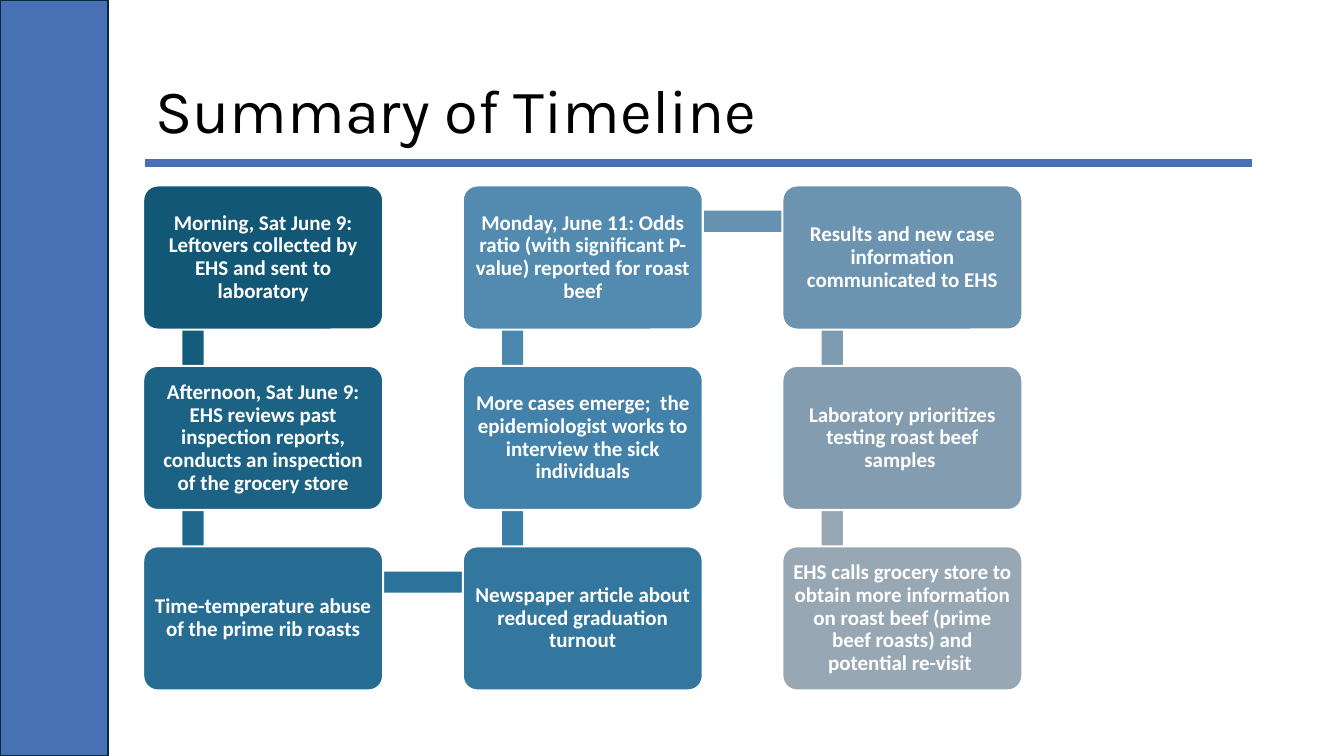
"""Build the "Summary of Timeline" slide: nine steps on a winding path."""
from dataclasses import dataclass

from lxml import etree
from pptx import Presentation
from pptx.dml.color import RGBColor
from pptx.enum.shapes import MSO_CONNECTOR, MSO_SHAPE
from pptx.enum.text import MSO_ANCHOR, PP_ALIGN
from pptx.oxml.ns import qn
from pptx.util import Pt

RECTANGLE = MSO_SHAPE.RECTANGLE
ROUNDED = MSO_SHAPE.ROUNDED_RECTANGLE
STRAIGHT = MSO_CONNECTOR.STRAIGHT
MIDDLE = MSO_ANCHOR.MIDDLE
LEFT, CENTER = PP_ALIGN.LEFT, PP_ALIGN.CENTER

TITLE = "Summary of Timeline"
STEPS = [
    ("Morning, Sat June 9: Leftovers collected by EHS and sent to laboratory", "135776"),
    ("Afternoon, Sat June 9: EHS reviews past inspection reports, "
     "conducts an inspection of the grocery store", "1C6285"),
    ("Time-temperature abuse of the prime rib roasts", "276D93"),
    ("Newspaper article about reduced graduation turnout", "34779E"),
    ("More cases emerge;  the epidemiologist works to interview the sick individuals", "4281A9"),
    ("Monday, June 11: Odds ratio (with significant P-value) reported for roast beef", "538AAF"),
    ("Results and new case information communicated to EHS", "6C93AF"),
    ("Laboratory prioritizes testing roast beef samples ", "839CB0"),
    ("EHS calls grocery store to obtain more information on roast beef "
     "(prime beef roasts) and potential re-visit ", "98A7B4"),
]
LINK_COLORS = ["145C7C", "1F688C", "2B739A", "3A7DA6", "4B88B0", "6691B0", "7F9BB1", "97A7B4"]


@dataclass(frozen=True)
class Theme:
    """Colours, fonts and type sizes."""
    accent: str = "4871B5"
    edge: str = "092A39"
    ink: str = "000000"
    white: str = "FFFFFF"
    title_font: str = "Karla"
    body_font: str = "Calibri"
    title_size: int = 44
    body_size: int = 15
    outline: float = 1.5
    rule: int = 6


THEME = Theme()
EMU_PER_PX = 9144
SLIDE_WIDTH, SLIDE_HEIGHT = 1333, 750
SIDEBAR_WIDTH = 107
TITLE_BOX = (144, 74, 1098, 77)
RULE_Y = 162
ROWS = 3
GRID_LEFT, GRID_TOP = 142, 184
STEP_X, STEP_Y = 317, 179
BOX_WIDTH, BOX_HEIGHT = 238, 143
BOX_INSET = 6
LINK_THICKNESS = 21
VERTICAL_LINK_OFFSET = (39, 36)
HORIZONTAL_LINK_OFFSET = (49, 25)


def px(value):
    """Convert px to EMU."""
    return value * EMU_PER_PX


def add_block(slide, kind, box, fill, line=None):
    """Add a filled shape with an optional outline."""
    shape = slide.shapes.add_shape(kind, *map(px, box))
    shape.shadow.inherit = False
    shape.fill.solid()
    shape.fill.fore_color.rgb = RGBColor.from_string(fill)
    if line:
        shape.line.color.rgb = RGBColor.from_string(line)
        shape.line.width = Pt(THEME.outline)
    else:
        shape.line.fill.background()
    return shape


def write_text(shape, text, font, size, color, align, bold):
    """Put one run of formatted text in a shape."""
    frame = shape.text_frame
    frame.word_wrap = True
    frame.vertical_anchor = MIDDLE
    paragraph = frame.paragraphs[0]
    paragraph.alignment = align
    paragraph.line_spacing = 0.9
    run = paragraph.add_run()
    run.text = text
    run.font.name = font
    run.font.size = Pt(size)
    run.font.bold = bold
    run.font.color.rgb = RGBColor.from_string(color)


def add_frame(slide):
    """Add the sidebar, the title and the rule below it."""
    add_block(slide, RECTANGLE, (0, 0, SIDEBAR_WIDTH, SLIDE_HEIGHT), THEME.accent, THEME.edge)
    left, top, width, height = TITLE_BOX
    rule = slide.shapes.add_connector(
        STRAIGHT, px(left), px(RULE_Y), px(left + width), px(RULE_Y))
    rule.line.color.rgb = RGBColor.from_string(THEME.accent)
    rule.line.width = Pt(THEME.rule)
    etree.SubElement(rule._element.spPr, qn("a:effectLst"))
    title = slide.shapes.title
    title.left, title.top, title.width, title.height = map(px, TITLE_BOX)
    write_text(title, TITLE, THEME.title_font, THEME.title_size, THEME.ink, LEFT, False)


def step_position(index):
    """Return the corner of a step; the middle column runs upwards."""
    column, row = divmod(index, ROWS)
    if column % 2:
        row = ROWS - 1 - row
    return GRID_LEFT + column * STEP_X, GRID_TOP + row * STEP_Y


def add_link(slide, index, color):
    """Add the bar from one step to the next."""
    x, y = step_position(index)
    next_x, next_y = step_position(index + 1)
    if x == next_x:
        dx, dy = VERTICAL_LINK_OFFSET
        size = (LINK_THICKNESS, STEP_Y)
    else:
        dx, dy = HORIZONTAL_LINK_OFFSET
        size = (STEP_X, LINK_THICKNESS)
    add_block(slide, RECTANGLE, (x + dx, min(y, next_y) + dy, *size), color)


def add_step(slide, index, text, color):
    """Add the rounded box of one step."""
    box = (*step_position(index), BOX_WIDTH, BOX_HEIGHT)
    shape = add_block(slide, ROUNDED, box, color, THEME.white)
    shape.adjustments[0] = 0.1
    frame = shape.text_frame
    frame.margin_left = frame.margin_right = px(BOX_INSET)
    frame.margin_top = frame.margin_bottom = px(BOX_INSET)
    write_text(shape, text, THEME.body_font, THEME.body_size, THEME.white, CENTER, True)


def main():
    """Build and save the slide."""
    presentation = Presentation()
    presentation.slide_width, presentation.slide_height = px(SLIDE_WIDTH), px(SLIDE_HEIGHT)
    slide = presentation.slides.add_slide(presentation.slide_layouts[5])
    add_frame(slide)
    for index, color in enumerate(LINK_COLORS):
        add_link(slide, index, color)
    for index, (text, color) in enumerate(STEPS):
        add_step(slide, index, text, color)
    presentation.save("out.pptx")


if __name__ == "__main__":
    main()
